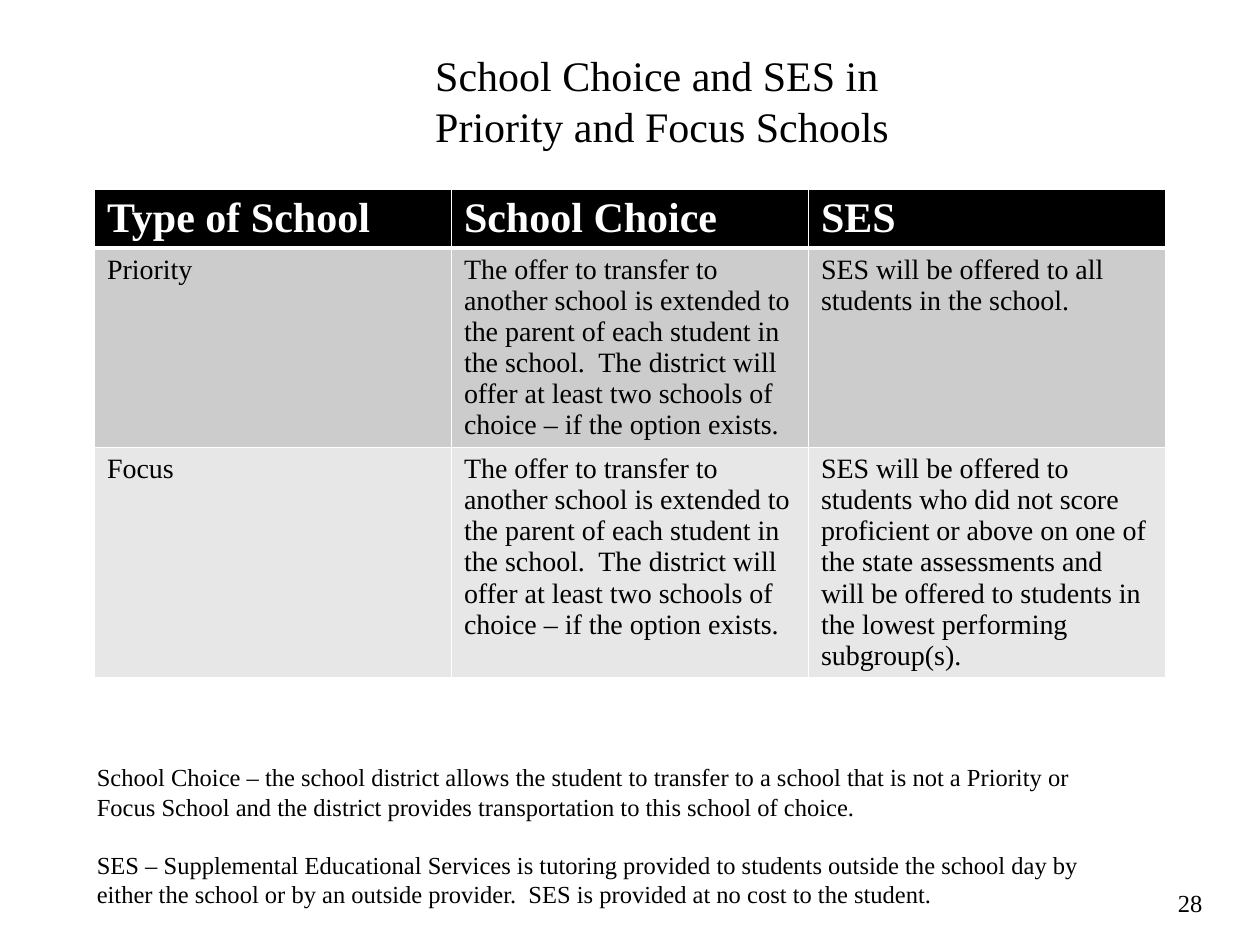
from dataclasses import dataclass

from lxml import etree
from pptx import Presentation
from pptx.dml.color import RGBColor
from pptx.enum.text import MSO_ANCHOR, PP_ALIGN
from pptx.oxml.ns import qn
from pptx.util import Inches, Pt

LEFT, CENTER = PP_ALIGN.LEFT, PP_ALIGN.CENTER
MIDDLE = MSO_ANCHOR.MIDDLE
FONT = "Times New Roman"
COLORS = {
    "text": "000000",
    "header": "000000",
    "priority": "CCCCCC",
    "focus": "E7E7E7",
    "white": "FFFFFF",
}
CHOICE = (
    "The offer to transfer to another school is extended to the parent of each "
    "student in the school.  The district will offer at least two schools of "
    "choice – if the option exists."
)


@dataclass
class Row:
    texts: tuple[str, ...]
    height: float
    fill: str
    color: str = "text"
    size: int = 16
    bold: bool = False
    top_line: int = 1
    bottom_line: int = 1


@dataclass
class Note:
    paragraphs: tuple[str, ...]
    left: float
    top: float
    width: float
    height: float


ROWS = (
    Row(("Type of School", "School Choice", "SES"), 0.46, "header",
        color="white", size=24, bold=True, bottom_line=3),
    Row(("Priority", CHOICE, "SES will be offered to all students in the school."),
        1.58, "priority", top_line=3),
    Row(("Focus", CHOICE,
         "SES will be offered to students who did not score proficient or above "
         "on one of the state assessments and will be offered to students in the "
         "lowest performing subgroup(s)."), 1.83, "focus"),
)
NOTES = (
    Note((
        "School Choice – the school district allows the student to transfer to a "
        "school that is not a Priority or Focus School and the district provides "
        "transportation to this school of choice.",
        "SES – Supplemental Educational Services is tutoring provided to students "
        "outside the school day by either the school or by an outside provider.  "
        "SES is provided at no cost to the student.",
    ), 0.67, 6, 8.25, 1.28),
    Note(("28",), 9.25, 7, 0.5, 0.34),
)


def write(tf, *texts: str, size: int = 14, color: str = "text",
          bold: bool = False, align=LEFT, gap: float = 0) -> None:
    tf.word_wrap = True
    for i, text in enumerate(texts):
        p = tf.add_paragraph() if i else tf.paragraphs[0]
        p.text = text
        p.alignment = align
        p.space_before = Pt(gap if i else 0)
        for r in p.runs:
            r.font.name = FONT
            r.font.size = Pt(size)
            r.font.bold = bold
            r.font.color.rgb = RGBColor.from_string(COLORS[color])


def add_borders(cell, top: int, bottom: int) -> None:
    tc_pr = cell._tc.get_or_add_tcPr()
    for side, width in (("L", 1), ("R", 1), ("T", top), ("B", bottom)):
        ln = etree.SubElement(tc_pr, qn(f"a:ln{side}"), w=str(Pt(width)))
        fill = etree.SubElement(ln, qn("a:solidFill"))
        etree.SubElement(fill, qn("a:srgbClr"), val=COLORS["white"])


def add_school_table(s, rows: tuple[Row, ...]) -> None:
    height = sum(row.height for row in rows)
    table = s.shapes.add_table(len(rows), len(rows[0].texts), Inches(0.75),
                               Inches(1.5), Inches(8.5), Inches(height)).table
    for i, row in enumerate(rows):
        table.rows[i].height = Inches(row.height)
        for cell, text in zip(table.rows[i].cells, row.texts):
            add_borders(cell, row.top_line, row.bottom_line)
            cell.fill.solid()
            cell.fill.fore_color.rgb = RGBColor.from_string(COLORS[row.fill])
            write(cell.text_frame, text, size=row.size, color=row.color,
                  bold=row.bold)


def add_note(s, note: Note) -> None:
    box = s.shapes.add_textbox(Inches(note.left), Inches(note.top),
                               Inches(note.width), Inches(note.height))
    write(box.text_frame, *note.paragraphs, gap=16.5)


def main() -> None:
    prs = Presentation()
    prs.slide_width, prs.slide_height = Inches(10), Inches(7.5)
    s = prs.slides.add_slide(prs.slide_layouts[5])

    title = s.shapes.title
    title.left, title.top = Inches(0.67), Inches(0.17)
    title.width, title.height = Inches(9.17), Inches(1.25)
    title.text_frame.vertical_anchor = MIDDLE
    write(title.text_frame, "School Choice and SES in \vPriority and Focus Schools",
          size=24, align=CENTER)

    add_school_table(s, ROWS)
    for note in NOTES:
        add_note(s, note)
    prs.save("out.pptx")


if __name__ == "__main__":
    main()
